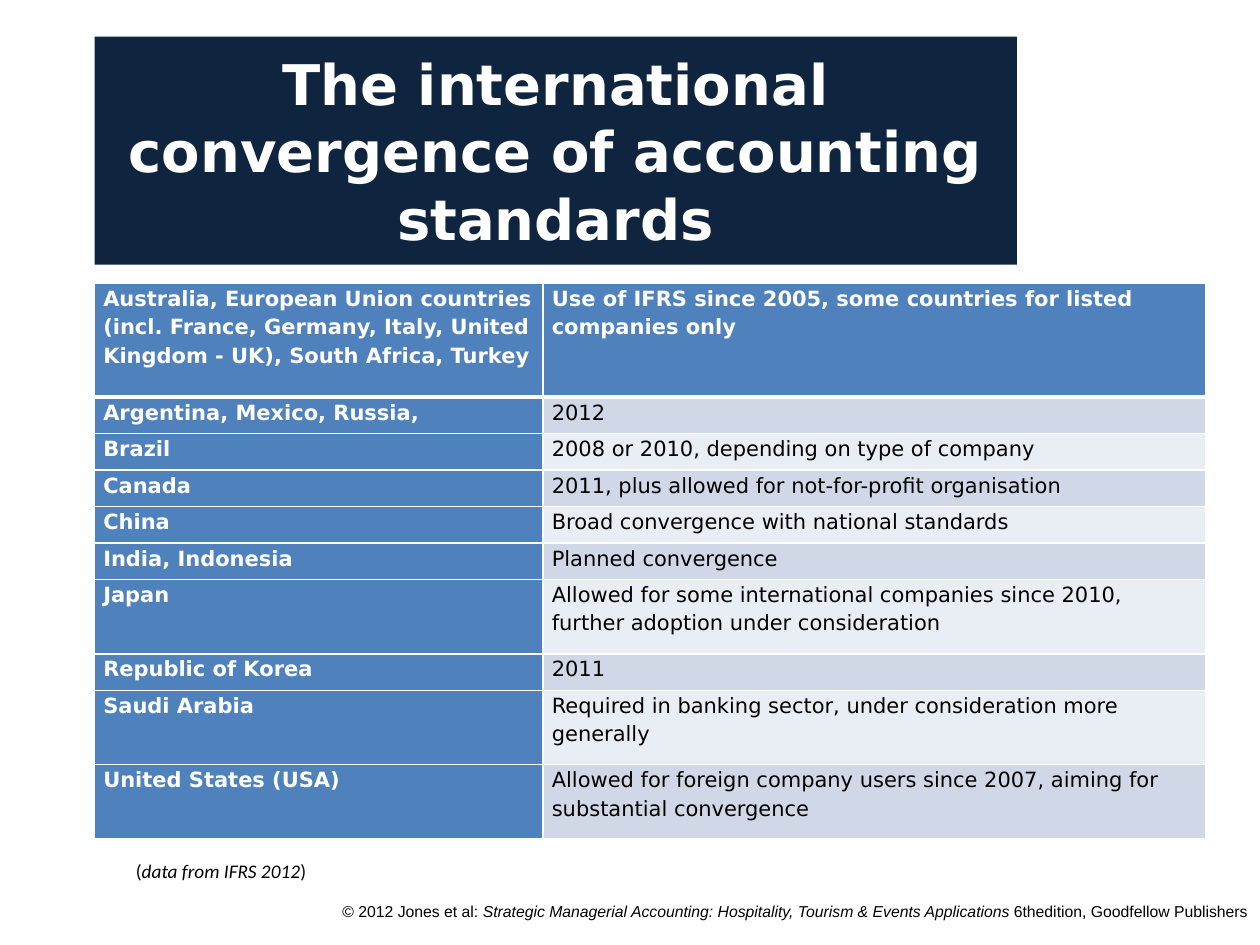
from lxml.etree import SubElement
from pptx import Presentation
from pptx.dml.color import RGBColor
from pptx.enum.shapes import MSO_SHAPE
from pptx.enum.text import MSO_ANCHOR, PP_ALIGN
from pptx.oxml.ns import qn
from pptx.util import Inches, Pt

TITLE = "The international convergence of accounting standards"
ADOPTION = [  # countries, status, row height
    ("Australia, European Union countries (incl. France, Germany, Italy, "
     "United Kingdom - UK), South Africa, Turkey",
     "Use of IFRS since 2005, some countries for listed companies only", 0.9),
    ("Argentina, Mexico, Russia,", "2012", 0.29),
    ("Brazil", "2008 or 2010, depending on type of company", 0.29),
    ("Canada", "2011, plus allowed for not-for-profit organisation", 0.29),
    ("China", "Broad convergence with national standards", 0.29),
    ("India, Indonesia", "Planned convergence", 0.29),
    ("Japan", "Allowed for some international companies since 2010, "
     "further adoption under consideration", 0.59),
    ("Republic of Korea", "2011", 0.29),
    ("Saudi Arabia",
     "Required in banking sector, under consideration more generally", 0.59),
    ("United States (USA)", "Allowed for foreign company users since 2007, "
     "aiming for substantial convergence", 0.59),
]
COLUMN_WIDTHS = (3.56, 5.26)
# Runs: text, italic
SOURCE_NOTE = [("(", False), ("data from IFRS 2012", True), (")", False)]
COPYRIGHT = [
    ("© 2012 Jones et al: ", False),
    ("Strategic Managerial Accounting: Hospitality, Tourism & Events "
     "Applications ", True),
    ("6thedition, Goodfellow Publishers", False),
]

NAVY, BLUE, WHITE, BLACK = "0F243E", "4F81BD", "FFFFFF", "000000"
BANDS = ("E9EDF4", "D0D8E8")
TITLE_FONT = {"name": "DejaVu Sans", "size": Pt(32), "bold": True}
TABLE_FONT = {"name": "DejaVu Sans", "size": Pt(12)}
NOTE_FONT = {"name": "Calibri", "size": Pt(11)}
COPYRIGHT_FONT = {"name": "Arial", "size": Pt(9)}


def rgb(value):
    return RGBColor.from_string(value)


def style(font, color, formats):
    for key, value in formats.items():
        setattr(font, key, value)
    font.color.rgb = rgb(color)


def add_text(box, runs, formats, align, anchor):
    textbox = slide.shapes.add_textbox(*map(Inches, box))
    frame = textbox.text_frame
    frame.word_wrap = True
    frame.vertical_anchor = anchor
    paragraph = frame.paragraphs[0]
    paragraph.alignment = align
    for text, italic in runs:
        run = paragraph.add_run()
        run.text = text
        style(run.font, BLACK, {**formats, "italic": italic})


def add_borders(cell, **widths):
    properties = cell._tc.get_or_add_tcPr()
    for side in "LRTB":
        line = SubElement(properties, qn(f"a:ln{side}"),
                          w=str(Pt(widths.get(side, 1))))
        fill = SubElement(line, qn("a:solidFill"))
        SubElement(fill, qn("a:srgbClr"), val=WHITE)


def fill_cell(cell, text, row, column):
    heading = row == 0 or column == 0
    cell.margin_left = cell.margin_right = Inches(0.07)
    cell.margin_top = cell.margin_bottom = 0
    # The heading row is closed by a thicker rule
    add_borders(cell, B=3 if row == 0 else 1, T=3 if row == 1 else 1)
    cell.fill.solid()
    cell.fill.fore_color.rgb = rgb(BLUE if heading else BANDS[row % 2])
    paragraph = cell.text_frame.paragraphs[0]
    paragraph.line_spacing = 1.15
    run = paragraph.add_run()
    run.text = text
    style(run.font, WHITE if heading else BLACK,
          {**TABLE_FONT, "bold": heading})


presentation = Presentation()
presentation.slide_width, presentation.slide_height = Inches(10), Inches(7.5)
slide = presentation.slides.add_slide(presentation.slide_layouts[6])

# Copyright line
add_text((2.23, 7.11, 7.77, 0.39), COPYRIGHT, COPYRIGHT_FONT,
         PP_ALIGN.RIGHT, MSO_ANCHOR.TOP)

# Title banner
banner = slide.shapes.add_shape(
    MSO_SHAPE.RECTANGLE, *map(Inches, (0.75, 0.29, 7.32, 1.81)))
banner.shadow.inherit = False
banner.fill.solid()
banner.fill.fore_color.rgb = rgb(NAVY)
banner.line.fill.background()
banner.text_frame.word_wrap = True
banner.text_frame.vertical_anchor = MSO_ANCHOR.MIDDLE
heading_line = banner.text_frame.paragraphs[0]
heading_line.alignment = PP_ALIGN.CENTER
heading_run = heading_line.add_run()
heading_run.text = TITLE
style(heading_run.font, WHITE, TITLE_FONT)

# Adoption table
adoption_table = slide.shapes.add_table(
    len(ADOPTION), len(COLUMN_WIDTHS), Inches(0.75), Inches(2.25),
    Inches(sum(COLUMN_WIDTHS)), Inches(sum(row[2] for row in ADOPTION))).table
for column, width in enumerate(COLUMN_WIDTHS):
    adoption_table.columns[column].width = Inches(width)
for row, (countries, status, height) in enumerate(ADOPTION):
    adoption_table.rows[row].height = Inches(height)
    for column, text in enumerate((countries, status)):
        fill_cell(adoption_table.cell(row, column), text, row, column)

# Source note
add_text((0.98, 6.66, 9.02, 0.5), SOURCE_NOTE, NOTE_FONT,
         PP_ALIGN.LEFT, MSO_ANCHOR.MIDDLE)

presentation.save("out.pptx")
